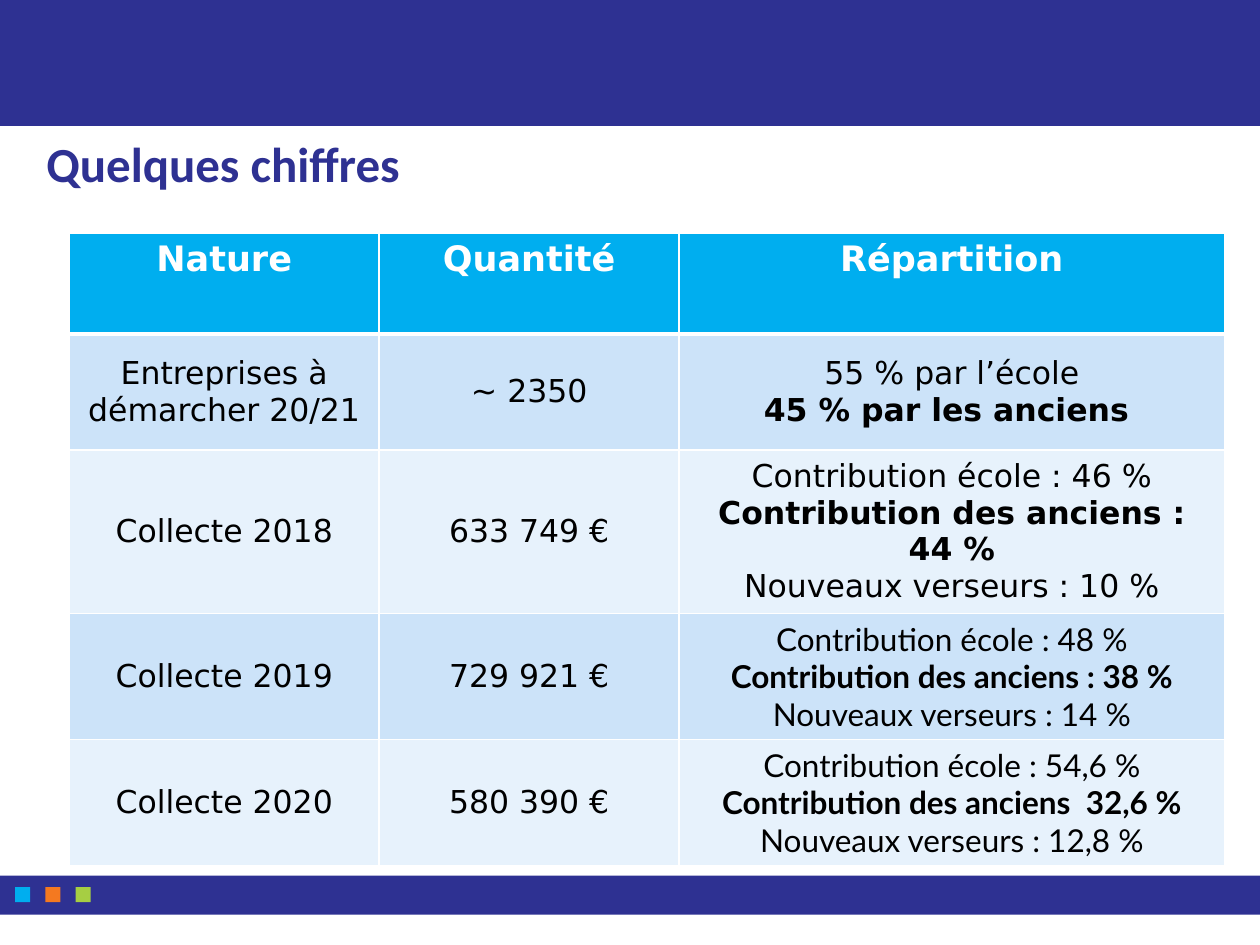
import pptx
import pptx.util
import pptx.dml.color
import pptx.enum.shapes
import pptx.enum.text
import pptx.oxml
import pptx.oxml.ns
from dataclasses import dataclass

Inches = pptx.util.Inches
Pt = pptx.util.Pt
MIDDLE = pptx.enum.text.MSO_ANCHOR.MIDDLE
TOP = pptx.enum.text.MSO_ANCHOR.TOP


@dataclass(frozen=True)
class Theme:
    navy: str = "2E3192"
    sky: str = "00AEEF"
    orange: str = "F47920"
    green: str = "A6CE43"
    white: str = "FFFFFF"
    black: str = "000000"
    bands: tuple = ("CCE3F9", "E7F2FC")
    title_font: str = "Calibri"
    table_font: str = "DejaVu Sans"
    detail_font: str = "Lato"
    title_size: int = 28
    header_size: int = 20
    body_size: int = 18
    thin: int = 1
    thick: int = 3


THEME = Theme()

HEADINGS = ["Nature", "Quantité", "Répartition"]
FIGURES = [
    ("Entreprises à démarcher 20/21", "~ 2350",
     "55 % par l’école\n45 % par les anciens ", THEME.table_font),
    ("Collecte 2018", "633 749 €",
     "Contribution école : 46 %\nContribution des anciens : 44 %\nNouveaux verseurs : 10 %",
     THEME.table_font),
    ("Collecte 2019", "729 921 €",
     "Contribution école : 48 %\nContribution des anciens : 38 %\nNouveaux verseurs : 14 %",
     THEME.detail_font),
    ("Collecte 2020", "580 390 €",
     "Contribution école : 54,6 %\nContribution des anciens  32,6 %\nNouveaux verseurs : 12,8 %",
     THEME.detail_font),
]
COLUMN_WIDTHS = [2.46, 2.38, 4.33]
ROW_HEIGHTS = [0.8, 0.92, 0.8, 0.8, 0.8]


def rgb(color):
    return pptx.dml.color.RGBColor.from_string(color)


def paint(shape, color):
    shape.shadow.inherit = False
    shape.fill.solid()
    shape.fill.fore_color.rgb = rgb(color)
    shape.line.fill.background()


def style_run(run, font, size, color, bold):
    run.font.name = font
    run.font.size = Pt(size)
    run.font.color.rgb = rgb(color)
    run.font.bold = bold


def add_block(slide, left, top, width, height, color):
    block = slide.shapes.add_shape(
        pptx.enum.shapes.MSO_SHAPE.RECTANGLE,
        Inches(left), Inches(top), Inches(width), Inches(height))
    paint(block, color)


def add_banner(slide, left, top, width, height):
    right, bottom = left + width, top + height
    notch = left + 1.72
    outline = slide.shapes.build_freeform(left, top, scale=Inches(1))
    outline.add_line_segments([
        (right, top), (right, bottom), (notch + 0.15, bottom),
        (notch, bottom - 0.15), (notch - 0.16, bottom), (left, bottom)])
    paint(outline.convert_to_shape(), THEME.navy)


def add_footer(slide, left, top, width, height):
    add_block(slide, left, top, width, height, THEME.navy)
    side = 0.12
    for position, color in enumerate([THEME.sky, THEME.orange, THEME.green]):
        add_block(slide, left + side + position * 2 * side, top + 0.09, side, side, color)


def add_title(slide, left, top, width, height):
    title = slide.shapes.add_textbox(Inches(left), Inches(top), Inches(width), Inches(height))
    frame = title.text_frame
    frame.word_wrap = True
    frame.vertical_anchor = MIDDLE
    frame.text = "Quelques chiffres"
    style_run(frame.paragraphs[0].runs[0], THEME.title_font, THEME.title_size, THEME.navy, True)


def set_borders(cell, top, bottom):
    widths = {"lnL": THEME.thin, "lnR": THEME.thin, "lnT": top, "lnB": bottom}
    properties = cell._tc.get_or_add_tcPr()
    for position, (side, width) in enumerate(widths.items()):
        properties.insert(position, pptx.oxml.parse_xml(
            f'<a:{side} {pptx.oxml.ns.nsdecls("a")} w="{Pt(width)}"><a:solidFill>'
            f'<a:srgbClr val="{THEME.white}"/></a:solidFill></a:{side}>'))


def fill_cell(cell, text, font, size, color, fill, anchor, is_bold):
    cell.fill.solid()
    cell.fill.fore_color.rgb = rgb(fill)
    cell.vertical_anchor = anchor
    cell.text_frame.text = text
    for paragraph in cell.text_frame.paragraphs:
        paragraph.alignment = pptx.enum.text.PP_ALIGN.CENTER
        style_run(paragraph.runs[0], font, size, color, is_bold(paragraph.text))


def add_figures(slide, left, top, width, height):
    table = slide.shapes.add_table(
        len(ROW_HEIGHTS), len(COLUMN_WIDTHS),
        Inches(left), Inches(top), Inches(width), Inches(height)).table
    for column, column_width in zip(table.columns, COLUMN_WIDTHS):
        column.width = Inches(column_width)
    for row, row_height in zip(table.rows, ROW_HEIGHTS):
        row.height = Inches(row_height)

    for column, heading in enumerate(HEADINGS):
        cell = table.cell(0, column)
        fill_cell(cell, heading, THEME.table_font, THEME.header_size,
                  THEME.white, THEME.sky, TOP, lambda text: True)
        set_borders(cell, THEME.thin, THEME.thick)

    for row, (nature, quantity, split, split_font) in enumerate(FIGURES, start=1):
        fonts = [THEME.table_font, THEME.table_font, split_font]
        for column, (text, font) in enumerate(zip([nature, quantity, split], fonts)):
            cell = table.cell(row, column)
            fill_cell(cell, text, font, THEME.body_size, THEME.black,
                      THEME.bands[(row - 1) % 2], MIDDLE, lambda line: "anciens" in line)
            set_borders(cell, THEME.thick if row == 1 else THEME.thin, THEME.thin)


def main():
    deck = pptx.Presentation()
    deck.slide_width = Inches(10)
    deck.slide_height = Inches(7.5)
    slide = deck.slides.add_slide(deck.slide_layouts[6])
    add_banner(slide, 0, 0, 10, 0.91)
    add_footer(slide, 0, 6.95, 10, 0.31)
    add_title(slide, 0.27, 1.02, 9.46, 0.54)
    add_figures(slide, 0.55, 1.85, sum(COLUMN_WIDTHS), sum(ROW_HEIGHTS))
    deck.save("out.pptx")


if __name__ == "__main__":
    main()
